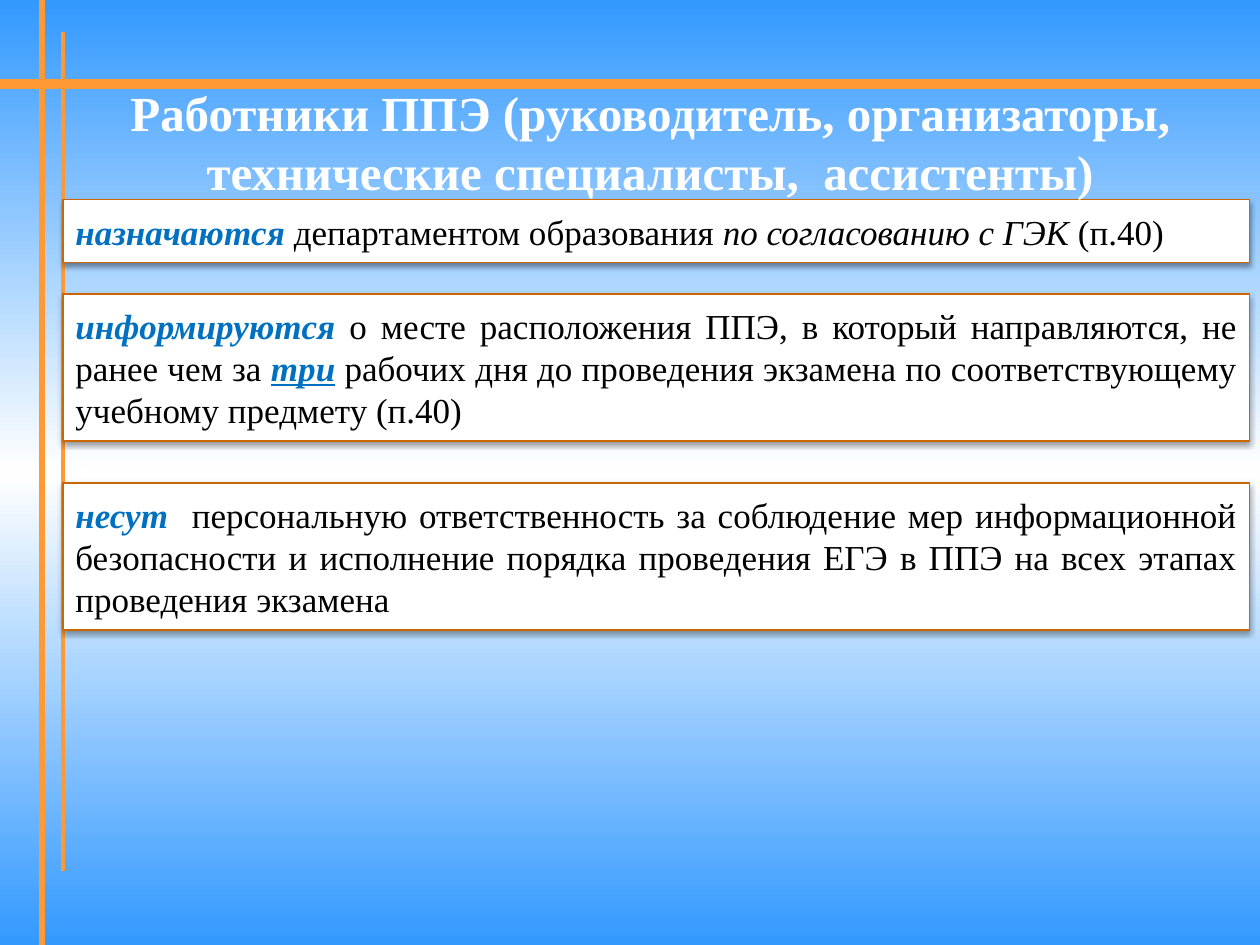
from dataclasses import dataclass

from lxml import etree
from pptx import Presentation
from pptx import util as u
from pptx.dml.color import RGBColor
from pptx.enum import shapes, text
from pptx.oxml import ns, parse_xml


@dataclass(frozen=True)
class Theme:
    """Colours, font and type sizes of the slide."""
    sky: str = "3399FF"
    white: str = "FFFFFF"
    orange: str = "FF9933"
    border: str = "CC6600"
    accent: str = "0070C0"
    ink: str = "000000"
    font: str = "Times New Roman"
    title_size: int = 28
    body_size: int = 20


class Deck:
    """Style and current slide, with a method for each kind of element."""

    def __init__(self, prs, theme):
        """Start a title-only slide."""
        self.theme = theme
        self.s = prs.slides.add_slide(prs.slide_layouts[5])

    def background(self):
        """Fill the background with a vertical three-stop gradient."""
        t = self.theme
        fill = self.s.background.fill
        fill.gradient()
        fill.gradient_angle = 90
        stops = self.s.element.find(".//" + ns.qn("a:gsLst"))
        for gs in list(stops):
            stops.remove(gs)
        for pos, colour in ((0, t.sky), (50, t.white), (100, t.sky)):
            gs = etree.SubElement(stops, ns.qn("a:gs"), pos=str(pos * 1000))
            etree.SubElement(gs, ns.qn("a:srgbClr"), val=colour)

    def line(self, x1, y1, x2, y2, width):
        """Draw a straight orange rule."""
        c = self.s.shapes.add_connector(
            shapes.MSO_CONNECTOR.STRAIGHT, u.Pt(x1), u.Pt(y1), u.Pt(x2), u.Pt(y2))
        c.line.color.rgb = RGBColor.from_string(self.theme.orange)
        c.line.width = u.Pt(width)
        etree.SubElement(c._element.spPr, ns.qn("a:effectLst"))

    def format_run(self, r, size, colour, bold=False, italic=False, underline=False):
        """Apply the theme font and the given emphasis to a run."""
        r.font.name = self.theme.font
        r.font.size = u.Pt(size)
        r.font.color.rgb = RGBColor.from_string(colour)
        r.font.bold = bold
        r.font.italic = italic
        r.font.underline = underline

    def title(self, words, left, top, width, height):
        """Place the title above all other elements."""
        sp = self.s.shapes.title
        sp.left, sp.top, sp.width, sp.height = map(u.Pt, (left, top, width, height))
        tf = sp.text_frame
        tf.text = words
        tf.word_wrap = True
        tf.auto_size = text.MSO_AUTO_SIZE.NONE
        tf.vertical_anchor = text.MSO_ANCHOR.MIDDLE
        p = tf.paragraphs[0]
        p.alignment = text.PP_ALIGN.CENTER
        self.format_run(p.runs[0], self.theme.title_size, self.theme.white, bold=True)
        self.s.shapes._spTree.append(sp._element)

    def shadow(self, sp):
        """Give a shape a soft shadow just below it."""
        sp._element.spPr.append(parse_xml(
            f'<a:effectLst {ns.nsdecls("a")}>'
            '<a:outerShdw blurRad="40000" dist="20000" dir="5400000" rotWithShape="0">'
            f'<a:srgbClr val="{self.theme.ink}"><a:alpha val="38000"/></a:srgbClr>'
            '</a:outerShdw></a:effectLst>'))

    def panel(self, runs, left, top, width, height):
        """Draw a white box of justified text from (words, emphasis) runs."""
        t = self.theme
        sp = self.s.shapes.add_shape(
            shapes.MSO_SHAPE.RECTANGLE, *map(u.Pt, (left, top, width, height)))
        sp.fill.solid()
        sp.fill.fore_color.rgb = RGBColor.from_string(t.white)
        sp.line.color.rgb = RGBColor.from_string(t.border)
        sp.line.width = u.Pt(0.75)
        self.shadow(sp)
        tf = sp.text_frame
        tf.word_wrap = True
        tf.auto_size = text.MSO_AUTO_SIZE.SHAPE_TO_FIT_TEXT
        tf.vertical_anchor = text.MSO_ANCHOR.TOP
        tf.margin_left = tf.margin_right = u.Pt(7.2)
        tf.margin_top = tf.margin_bottom = u.Pt(6)
        p = tf.paragraphs[0]
        p.alignment = text.PP_ALIGN.JUSTIFY
        for words, emphasis in runs:
            r = p.add_run()
            r.text = words
            style = {"colour": t.ink, **emphasis}
            self.format_run(r, t.body_size, **style)


def main():
    """Build and save the slide."""
    prs = Presentation()
    prs.slide_width, prs.slide_height = u.Pt(720), u.Pt(540)
    theme = Theme()
    deck = Deck(prs, theme)
    deck.background()
    for rule in ((0, 48, 720, 48, 6), (24, 0, 24, 540, 3), (36, 18, 36, 498, 2.25)):
        deck.line(*rule)

    plain, italic = {}, {"italic": True}
    key = {"colour": theme.accent, "bold": True, "italic": True}
    panels = (
        (114, 36, [("назначаются ", key), ("департаментом образования", plain),
                   (" по согласованию с ГЭК", italic), (" (п.40)", plain)]),
        (168, 84, [("информируются ", key),
                   ("о месте расположения ППЭ, в который направляются, "
                    "не ранее чем за ", plain),
                   ("три", {**key, "underline": True}),
                   (" рабочих дня до проведения экзамена по соответствующему "
                    "учебному предмету (п.40)", plain)]),
        (276, 84, [("несут", key),
                   ("  персональную ответственность за соблюдение мер информационной "
                    "безопасности и исполнение порядка проведения ЕГЭ в ППЭ на всех "
                    "этапах проведения экзамена", plain)]),
    )
    for top, height, runs in panels:
        deck.panel(runs, 36, top, 678, height)
    deck.title("Работники ППЭ (руководитель, организаторы, "
               "технические специалисты,  ассистенты)", 36, 60, 671, 42)
    prs.save("out.pptx")


if __name__ == "__main__":
    main()
